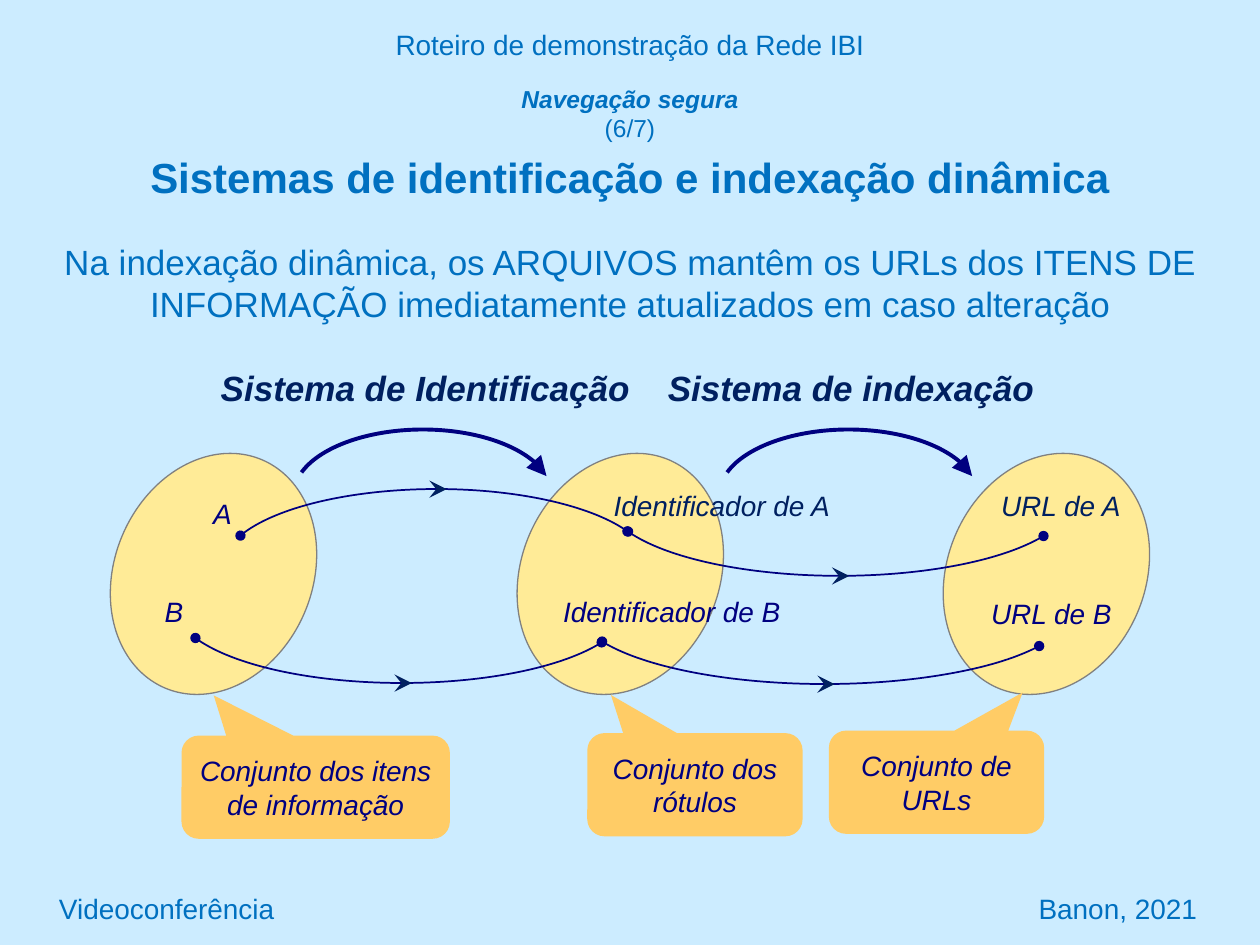
from pptx import Presentation
from pptx.util import Cm, Pt
from pptx.dml.color import RGBColor
from pptx.enum.shapes import MSO_SHAPE as Kind, MSO_CONNECTOR as Conn
from pptx.enum.text import PP_ALIGN as Align, MSO_ANCHOR as Anchor
from lxml.etree import SubElement
from pptx.oxml.ns import qn

SKY = RGBColor(0xCC, 0xEC, 0xFF)
BLUE = RGBColor(0x00, 0x70, 0xC0)
NAVY = RGBColor(0x00, 0x00, 0x80)
DARK = RGBColor(0x00, 0x20, 0x60)
GRAY = RGBColor(0x80, 0x80, 0x80)
CREAM = RGBColor(0xFF, 0xEB, 0x97)
GOLD = RGBColor(0xFF, 0xCC, 0x66)

PLAIN = {"name": "Arial", "size": Pt(16), "bold": False, "italic": False}
SLANT = PLAIN | {"italic": True}
HEAD = PLAIN | {"size": Pt(20), "bold": True, "italic": True}
BODY = PLAIN | {"size": Pt(20)}
TOPIC = PLAIN | {"size": Pt(14), "bold": True, "italic": True}
COUNT = PLAIN | {"size": Pt(14)}
TITLE = PLAIN | {"size": Pt(24), "bold": True}


def style(item, form):
    """Set each attribute of item from the format dict."""
    for key, val in form.items():
        setattr(item, key, val)


def write(par, text, form, color, align=Align.CENTER):
    """Add one formatted run to a paragraph."""
    run = par.add_run()
    run.text = text
    style(run.font, form)
    run.font.color.rgb = color
    par.alignment = align


def label(slide, box, text, form, color, wrap=False, align=Align.CENTER):
    """Add a text box and return its frame."""
    frame = slide.shapes.add_textbox(*map(Cm, box)).text_frame
    frame.word_wrap = wrap
    write(frame.paragraphs[0], text, form, color, align)
    return frame


def shape(slide, kind, box, fill=None, line=None, width=1):
    """Add a flat preset shape."""
    item = slide.shapes.add_shape(kind, *map(Cm, box))
    item.shadow.inherit = False
    for part, color in ((item.fill, fill), (item.line.fill, line)):
        if color is None:
            part.background()
        else:
            part.solid()
            part.fore_color.rgb = color
    if line is not None:
        item.line.width = Pt(width)
    return item


def tip(item, end, kind, size="med"):
    """Put an arrowhead on one end of a line."""
    SubElement(item.line._get_or_add_ln(), qn(f"a:{end}"), type=kind, w=size, len=size)


def arc(slide, box, width, turns, flip=False):
    """Add an open arc between two angles."""
    item = shape(slide, Kind.ARC, box, line=NAVY, width=width)
    item.adjustments[0], item.adjustments[1] = turns
    if flip:
        item._element.spPr.xfrm.set("flipV", "1")
    return item


def link(slide, box, flip):
    """Draw a dotted-end arc with a direction mark at its middle."""
    item = arc(slide, box, 1, (113.27, 209.83), flip)
    tip(item, "headEnd", "oval")
    tip(item, "tailEnd", "oval")
    left, top, wide, high = box
    mid, base = left + wide / 2, top + high * flip
    mark = slide.shapes.add_connector(Conn.STRAIGHT, *map(Cm, (mid, base, mid + 0.2, base)))
    mark.line.color.rgb = DARK
    mark.line.width = Pt(0.75)
    tip(mark, "tailEnd", "stealth", "lg")
    SubElement(mark._element.spPr, qn("a:effectLst"))


def header(slide, box):
    """Write the running title, topic and slide title."""
    left, top, wide, high = box
    label(slide, (left, top, wide, 0.94), "Roteiro de demonstração da Rede IBI", PLAIN, BLUE, True)
    frame = label(slide, (left + 1.9, top + 1.13, wide - 3.8, high - 1.13),
                  "Navegação segura", TOPIC, BLUE, True)
    par = frame.paragraphs[0]
    par.add_line_break()
    write(par, "(6/7)", COUNT, BLUE)
    par = frame.add_paragraph()
    par.space_before = Pt(5)
    write(par, "Sistemas de identificação e indexação dinâmica", TITLE, BLUE)


def body(slide, box):
    """Write the statement under the title."""
    label(slide, box, "Na indexação dinâmica, os ARQUIVOS mantêm os URLs dos ITENS DE "
          "INFORMAÇÃO imediatamente atualizados em caso alteração", BODY, BLUE, True)


def diagram(slide, box):
    """Draw the three sets, their systems and their links."""
    left, top = box[:2]
    for x in (0, 8.2, 16.79):
        oval = shape(slide, Kind.OVAL, (left + x, top + 1.81, 3.99, 5), CREAM, GRAY, 0.75)
        oval.rotation = 23
    for x in (3.61, 12.19):
        bow = arc(slide, (left + x, top + 1.4, 5.21, 2.64), 2.25, (114.33, 210.79))
        tip(bow, "tailEnd", "triangle", "lg")
    for x, y, wide, flip in ((2.19, 2.6, 8.61, False), (1.22, 3.41, 9.14, True),
                             (9.91, 1.25, 9.4, True), (9.3, 3.43, 10.03, True)):
        link(slide, (left + x, top + y, wide, 3.1), flip)
    for x, y, wide, text, form, color in (
            (1.86, 0, 8.81, "Sistema de Identificação", HEAD, DARK),
            (10.87, 0, 7.95, "Sistema de indexação", HEAD, DARK),
            (1.73, 2.62, 0.89, "A", SLANT, NAVY),
            (0.76, 4.6, 0.86, "B", SLANT, NAVY),
            (9.7, 2.47, 5.08, "Identificador de A", SLANT, DARK),
            (8.76, 4.6, 4.95, "Identificador de B", SLANT, NAVY),
            (17.6, 2.47, 2.95, "URL de A", SLANT, DARK),
            (17.4, 4.65, 2.97, "URL de B", SLANT, NAVY)):
        label(slide, (left + x, top + y, wide, 1), text, form, color)


def notes(slide, box):
    """Place the callouts that name the sets."""
    left, top, _, high = box
    for x, y, wide, tail, text in (
            (0, 0.1, 5.41, (-0.38, -0.89), "Conjunto dos itens de informação"),
            (8.18, 0.05, 4.34, (-0.39, -0.87), "Conjunto dos rótulos"),
            (13.05, 0, 4.34, (0.4, -0.87), "Conjunto de URLs")):
        item = shape(slide, Kind.ROUNDED_RECTANGULAR_CALLOUT,
                     (left + x, top + y, wide, high), GOLD)
        item.adjustments[0], item.adjustments[1] = tail
        frame = item.text_frame
        style(frame, {"word_wrap": True, "vertical_anchor": Anchor.MIDDLE,
                      "margin_left": Cm(0.2), "margin_right": Cm(0.2)})
        write(frame.paragraphs[0], text, SLANT, NAVY)


def footer(slide, box):
    """Write the event on the left and the author on the right."""
    left, top, wide, high = box
    half = wide / 2
    for x, text, align in ((left, "Videoconferência", Align.LEFT),
                           (left + half, "Banon, 2021", Align.RIGHT)):
        frame = label(slide, (x, top, half, high), text, PLAIN, BLUE, True, align)
        frame.vertical_anchor = Anchor.MIDDLE


def main():
    """Build the slide and save it."""
    deck = Presentation()
    style(deck, {"slide_width": Cm(25.4), "slide_height": Cm(19.05)})
    slide = deck.slides.add_slide(deck.slide_layouts[6])
    slide.background.fill.solid()
    slide.background.fill.fore_color.rgb = SKY
    header(slide, (0, 0.43, 25.4, 3.62))
    body(slide, (0.71, 4.72, 24, 1.96))
    diagram(slide, (2.31, 7.26, 20.78, 7))
    notes(slide, (3.66, 14.73, 17.39, 2.08))
    footer(slide, (0.94, 17.78, 23.44, 1.07))
    deck.save("out.pptx")


if __name__ == "__main__":
    main()
